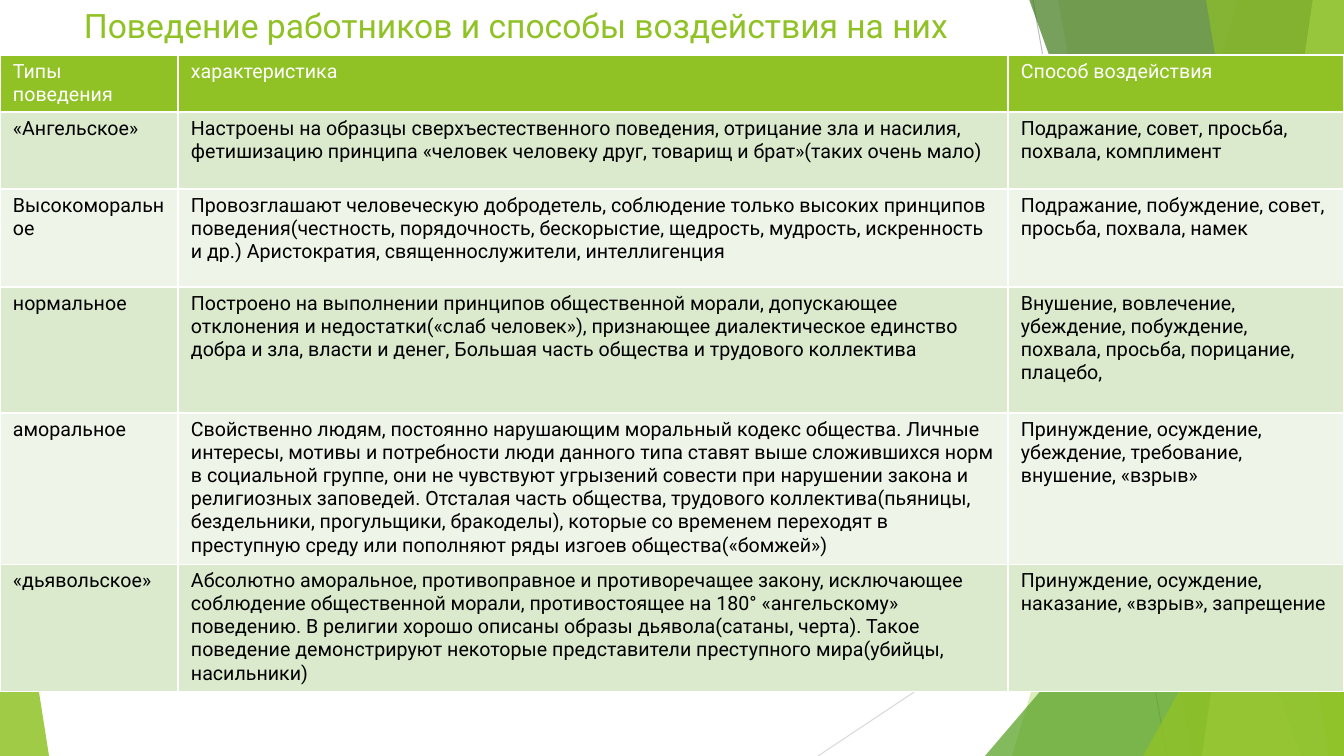
from lxml.etree import SubElement
from pptx import Presentation
from pptx.dml.color import RGBColor
from pptx.enum.shapes import MSO_CONNECTOR as Connector, MSO_SHAPE as Shape
from pptx.enum.text import MSO_ANCHOR as Anchor
from pptx.oxml.ns import qn
from pptx.util import Pt

# Content
TITLE = "Поведение работников и способы воздействия на них"
ROWS = [
    ("Типы поведения", "характеристика", "Способ воздействия"),
    ("«Ангельское»",
     "Настроены на образцы сверхъестественного поведения, отрицание зла и насилия, "
     "фетишизацию принципа «человек человеку друг, товарищ и брат»(таких очень мало)",
     "Подражание, совет, просьба, похвала, комплимент"),
    ("Высокоморальное",
     "Провозглашают человеческую добродетель, соблюдение только высоких принципов "
     "поведения(честность, порядочность, бескорыстие, щедрость, мудрость, искренность "
     "и др.) Аристократия, священнослужители, интеллигенция",
     "Подражание, побуждение, совет, просьба, похвала, намек"),
    ("нормальное",
     "Построено на выполнении принципов общественной морали, допускающее "
     "отклонения и недостатки(«слаб человек»), признающее диалектическое единство "
     "добра и зла, власти и денег, Большая часть общества и трудового коллектива",
     "Внушение, вовлечение, убеждение, побуждение, похвала, просьба, порицание, плацебо,"),
    ("аморальное",
     "Свойственно людям, постоянно нарушающим моральный кодекс общества. Личные "
     "интересы, мотивы и потребности люди данного типа ставят выше сложившихся "
     "норм в социальной группе, они не чувствуют угрызений совести при нарушении "
     "закона и религиозных заповедей. Отсталая часть общества, трудового "
     "коллектива(пьяницы, бездельники, прогульщики, бракоделы), которые со временем "
     "переходят в преступную среду или пополняют ряды изгоев общества(«бомжей»)",
     "Принуждение, осуждение, убеждение, требование, внушение, «взрыв»"),
    ("«дьявольское»",
     "Абсолютно аморальное, противоправное и противоречащее закону, исключающее "
     "соблюдение общественной морали, противостоящее на 180° «ангельскому» "
     "поведению. В религии хорошо описаны образы дьявола(сатаны, черта). Такое "
     "поведение демонстрируют некоторые представители преступного мира(убийцы, насильники)",
     "Принуждение, осуждение, наказание, «взрыв», запрещение"),
]

THEME = {
    "font": "Roboto", "title_size": 24, "cell_size": 14,
    "accent": "90C226", "green": "54A021", "dark": "3F7819", "lime": "C0E474",
    "white": "FFFFFF", "black": "000000",
    "bands": ("EEF4E8", "DBE9CD"),
    "line": "BFBFBF", "pale_line": "D9D9D9",
}

# Geometry in px
WIDTH, HEIGHT = 1344, 756
COLUMN_WIDTHS = (178, 830, 336)
ROW_HEIGHTS = (56, 77, 98, 126, 149, 126)
TABLE_TOP = 55
LINES = [(1033, 0, 1167, HEIGHT, "line"), (WIDTH, 406, 818, HEIGHT, "pale_line")]
# Bands reach the right edge: top x, bottom x, colour, opacity %
# Triangles: left, top, width, height, apex position, colour, opacity %
DECOR = [
    (1238, 1012, "accent", 30),
    (1058, 1192, "accent", 20),
    (985, 336, 359, 420, 1, "green", 72),
    (1029, 1301, "dark", 70),
    (1313, 1202, "lime", 70),
    (1206, 1329, "accent", 65),
    (1143, 396, 201, 360, 1, "accent", 80),
    (0, 443, 49, 313, 0, "accent", 85),
]


def px(value):
    return round(value * 914400 / 100.8)


def color(value):
    return RGBColor.from_string(value)


def style_text(text_frame, size, text_color):
    for run in text_frame.paragraphs[0].runs:
        run.font.name = THEME["font"]
        run.font.size = Pt(size)
        run.font.color.rgb = color(text_color)


def add_line(slide, x1, y1, x2, y2, name):
    line = slide.shapes.add_connector(Connector.STRAIGHT, px(x1), px(y1), px(x2), px(y2))
    line.line.color.rgb = color(THEME[name])
    line.line.width = Pt(0.75)
    SubElement(line._element.spPr, qn("a:effectLst"))


def add_decor(slide, *geometry, name, opacity):
    if len(geometry) == 2:
        top_x, bottom_x = geometry
        builder = slide.shapes.build_freeform(top_x, -1, scale=px(1))
        builder.add_line_segments([(WIDTH, -1), (WIDTH, HEIGHT), (bottom_x, HEIGHT)])
        shape = builder.convert_to_shape()
    else:
        *box, apex = geometry
        shape = slide.shapes.add_shape(Shape.ISOSCELES_TRIANGLE, *map(px, box))
        shape.adjustments[0] = apex
    shape.shadow.inherit = False
    shape.line.fill.background()
    shape.fill.solid()
    shape.fill.fore_color.rgb = color(THEME[name])
    fill_color = next(shape._element.spPr.iter(qn("a:srgbClr")))
    SubElement(fill_color, qn("a:alpha"), val=str(opacity * 1000))


def add_borders(cell):
    properties = cell._tc.get_or_add_tcPr()
    for index, side in enumerate("LRTB"):
        border = SubElement(properties, qn(f"a:ln{side}"), w=str(Pt(1)))
        fill = SubElement(border, qn("a:solidFill"))
        SubElement(fill, qn("a:srgbClr"), val=THEME["white"])
        properties.insert(index, border)


def add_title(slide):
    box = slide.shapes.add_textbox(px(74), 0, px(1210), px(62))
    frame = box.text_frame
    frame.word_wrap = True
    frame.vertical_anchor = Anchor.TOP
    frame.text = TITLE
    style_text(frame, THEME["title_size"], THEME["accent"])


def add_behaviour_table(slide):
    table = slide.shapes.add_table(
        len(ROWS), len(COLUMN_WIDTHS), 0, px(TABLE_TOP),
        px(sum(COLUMN_WIDTHS)), px(sum(ROW_HEIGHTS))).table
    for column, width in zip(table.columns, COLUMN_WIDTHS):
        column.width = px(width)
    for row_index, (row, height) in enumerate(zip(table.rows, ROW_HEIGHTS)):
        row.height = px(height)
        is_header = row_index == 0
        background = THEME["accent"] if is_header else THEME["bands"][row_index % 2]
        text_color = THEME["white"] if is_header else THEME["black"]
        for cell, text in zip(row.cells, ROWS[row_index]):
            cell.text = text
            cell.margin_left = cell.margin_right = px(13)
            cell.margin_top = cell.margin_bottom = px(5)
            cell.fill.solid()
            cell.fill.fore_color.rgb = color(background)
            add_borders(cell)
            style_text(cell.text_frame, THEME["cell_size"], text_color)
    table.first_row = table.horz_banding = False


def main():
    presentation = Presentation()
    presentation.slide_width, presentation.slide_height = px(WIDTH), px(HEIGHT)
    slide = presentation.slides.add_slide(presentation.slide_layouts[6])

    # Background facets
    for line in LINES:
        add_line(slide, *line)
    for *geometry, name, opacity in DECOR:
        add_decor(slide, *geometry, name=name, opacity=opacity)

    # Title and table
    add_title(slide)
    add_behaviour_table(slide)
    presentation.save("out.pptx")


if __name__ == "__main__":
    main()
